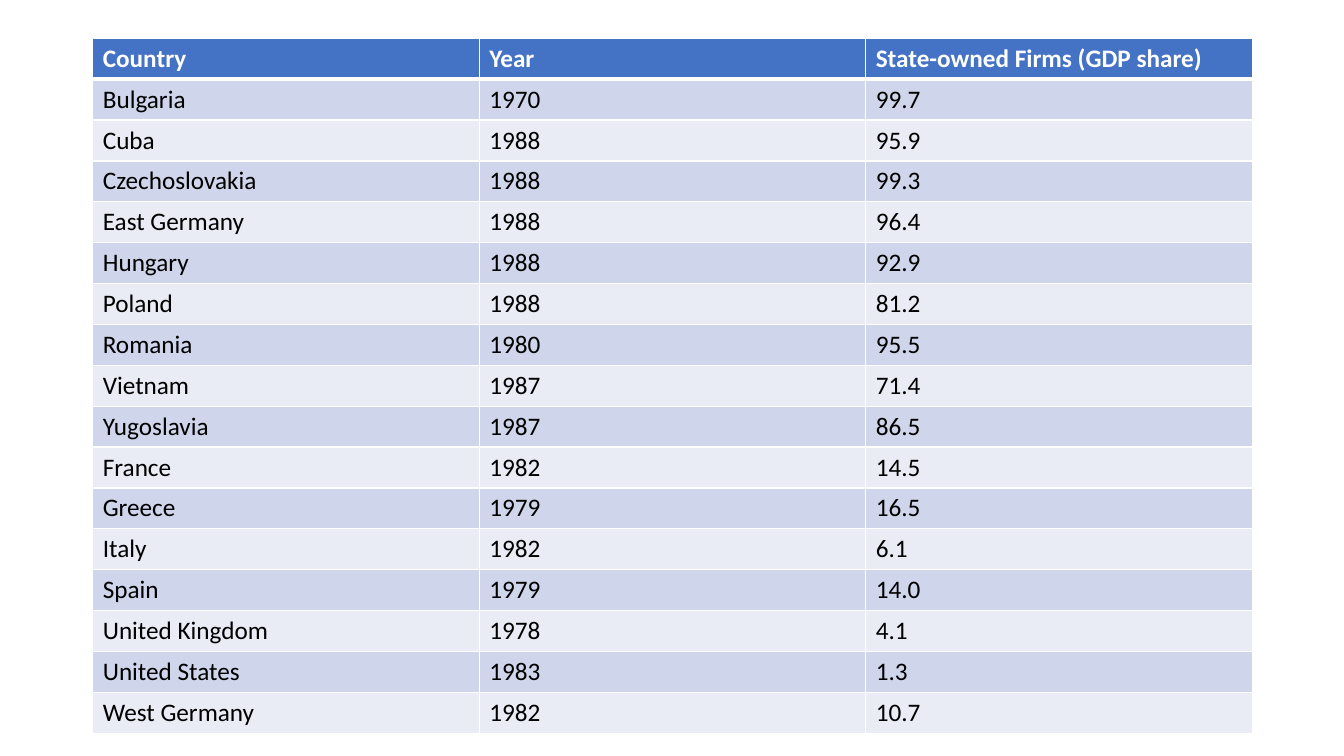
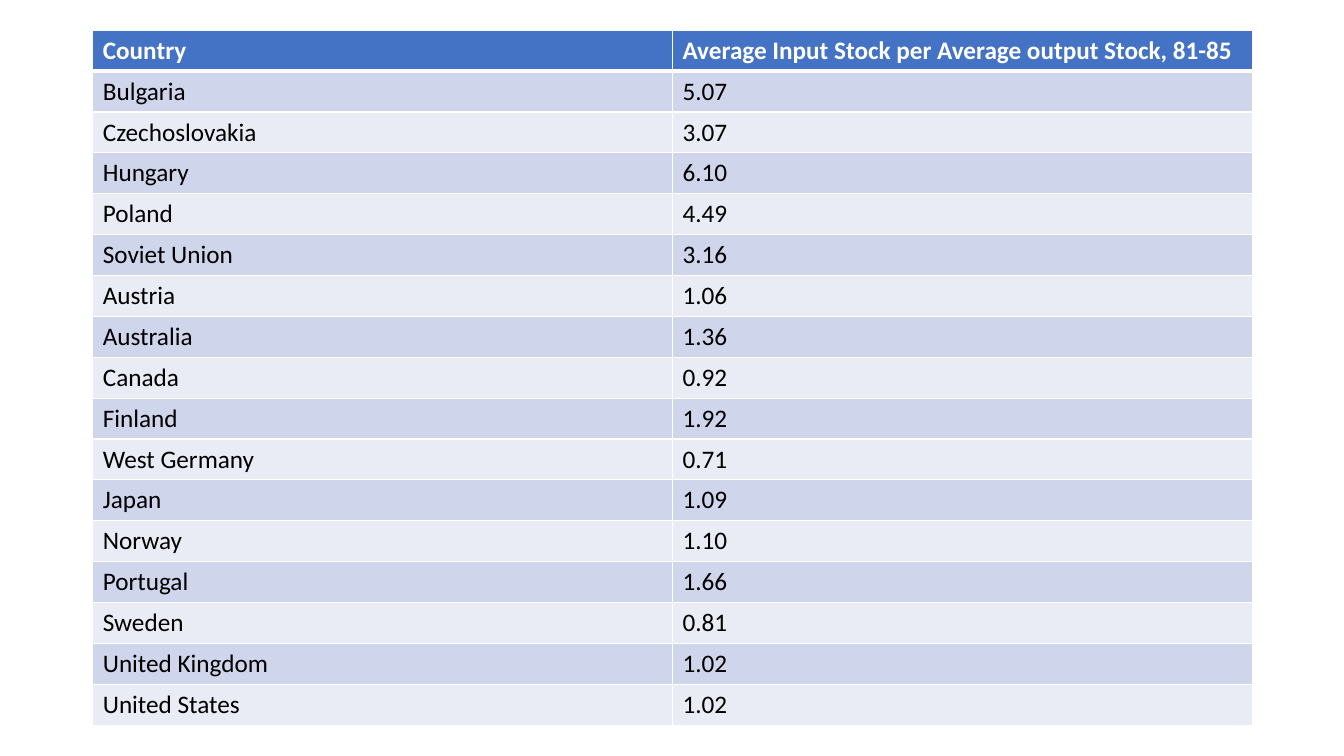
from pptx import Presentation
from pptx.dml.color import RGBColor
from pptx.oxml.ns import qn
from pptx.util import Inches, Pt
from lxml.etree import SubElement

# Shared colours and formats
WHITE = RGBColor(0xFF, 0xFF, 0xFF)
BLACK = RGBColor(0x00, 0x00, 0x00)
BLUE = RGBColor(0x44, 0x72, 0xC4)
BAND_DARK = RGBColor(0xCF, 0xD5, 0xEA)
BAND_LIGHT = RGBColor(0xE9, 0xEB, 0xF5)

HEADER_FONT = {"name": "Calibri", "size": Pt(18), "bold": True}
BODY_FONT = {**HEADER_FONT, "bold": False}
THIN, THICK = Pt(1), Pt(3)

TABLE_LEFT, TABLE_WIDTH, TABLE_HEIGHT = Inches(0.92), Inches(11.5), Inches(6.89)

# Table contents, header row first
STATE_FIRMS = [
    ("Country", "Year", "State-owned Firms (GDP share)"),
    ("Bulgaria", "1970", "99.7"),
    ("Cuba", "1988", "95.9"),
    ("Czechoslovakia", "1988", "99.3"),
    ("East Germany", "1988", "96.4"),
    ("Hungary", "1988", "92.9"),
    ("Poland", "1988", "81.2"),
    ("Romania", "1980", "95.5"),
    ("Vietnam", "1987", "71.4"),
    ("Yugoslavia", "1987", "86.5"),
    ("France", "1982", "14.5"),
    ("Greece", "1979", "16.5"),
    ("Italy", "1982", "6.1"),
    ("Spain", "1979", "14.0"),
    ("United Kingdom", "1978", "4.1"),
    ("United States", "1983", "1.3"),
    ("West Germany", "1982", "10.7"),
]
INPUT_STOCKS = [
    ("Country", "Average Input Stock per Average output Stock, 81-85"),
    ("Bulgaria", "5.07"),
    ("Czechoslovakia", "3.07"),
    ("Hungary", "6.10"),
    ("Poland", "4.49"),
    ("Soviet Union", "3.16"),
    ("Austria", "1.06"),
    ("Australia", "1.36"),
    ("Canada", "0.92"),
    ("Finland", "1.92"),
    ("West Germany", "0.71"),
    ("Japan", "1.09"),
    ("Norway", "1.10"),
    ("Portugal", "1.66"),
    ("Sweden", "0.81"),
    ("United Kingdom", "1.02"),
    ("United States", "1.02"),
]


def set_borders(cell, top, bottom):
    """Draw white borders; the sides are always thin."""
    tc_pr = cell._tc.get_or_add_tcPr()
    for side, width in {"L": THIN, "R": THIN, "T": top, "B": bottom}.items():
        ln = SubElement(tc_pr, qn(f"a:ln{side}"), w=str(width))
        fill = SubElement(ln, qn("a:solidFill"))
        SubElement(fill, qn("a:srgbClr"), val=str(WHITE))


def fill_cell(cell, text, row):
    """Write and format one cell according to its row number."""
    header = row == 0
    set_borders(cell, THICK if row == 1 else THIN, THICK if header else THIN)
    cell.fill.solid()
    band = BAND_DARK if row % 2 else BAND_LIGHT
    cell.fill.fore_color.rgb = BLUE if header else band

    r = cell.text_frame.paragraphs[0].add_run()
    r.text = text
    for name, value in (HEADER_FONT if header else BODY_FONT).items():
        setattr(r.font, name, value)
    r.font.color.rgb = WHITE if header else BLACK


def add_table_slide(prs, rows, top):
    """Add a slide with one banded table of equal rows and columns."""
    s = prs.slides.add_slide(prs.slide_layouts.get_by_name("Blank"))
    table = s.shapes.add_table(len(rows), len(rows[0]), TABLE_LEFT, top,
                               TABLE_WIDTH, TABLE_HEIGHT).table
    for i, values in enumerate(rows):
        for j, text in enumerate(values):
            fill_cell(table.cell(i, j), text, i)


def main():
    prs = Presentation()
    prs.slide_width, prs.slide_height = Inches(13.33), Inches(7.5)
    add_table_slide(prs, STATE_FIRMS, Inches(0.38))
    add_table_slide(prs, INPUT_STOCKS, Inches(0.3))
    prs.save("out.pptx")


if __name__ == "__main__":
    main()
